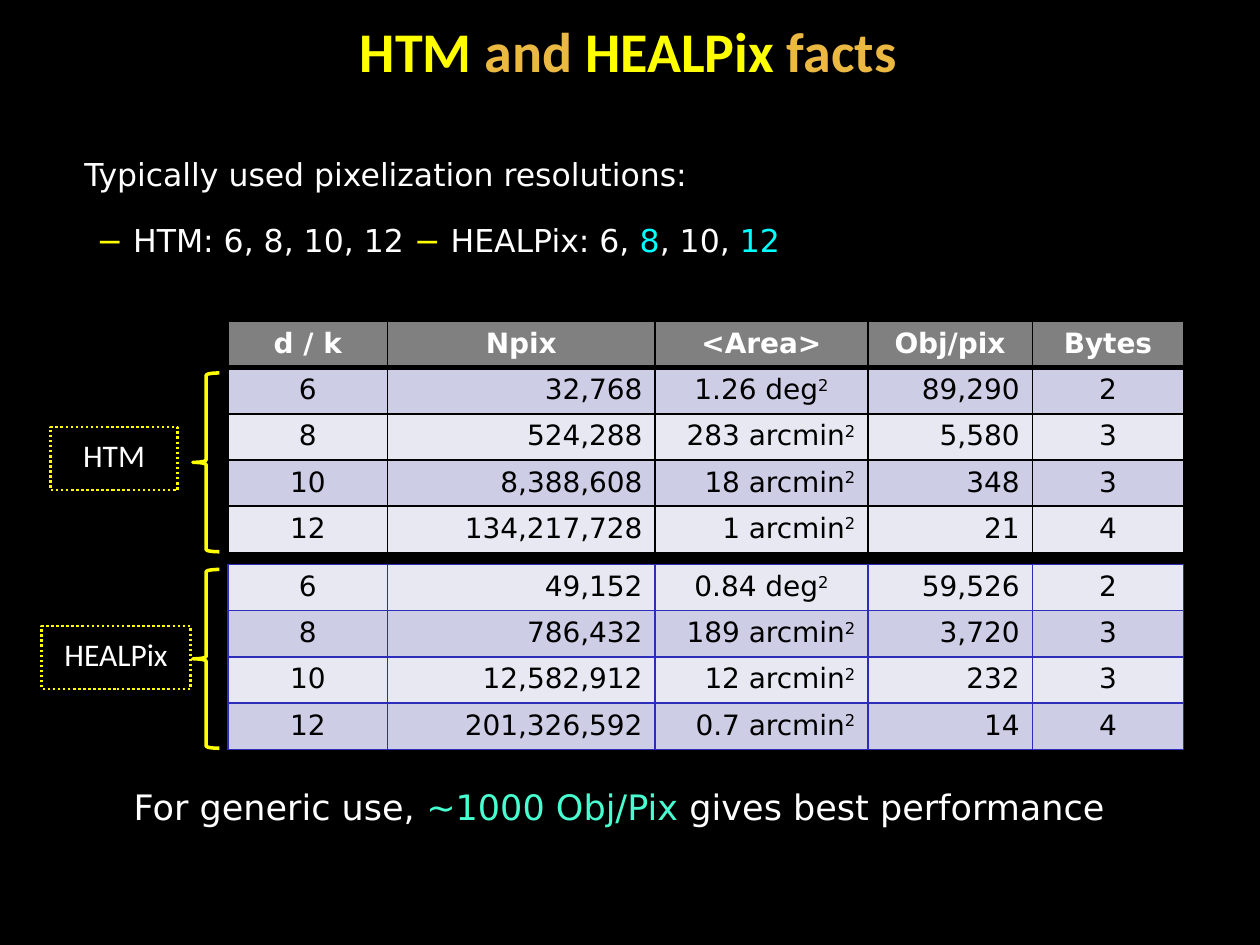
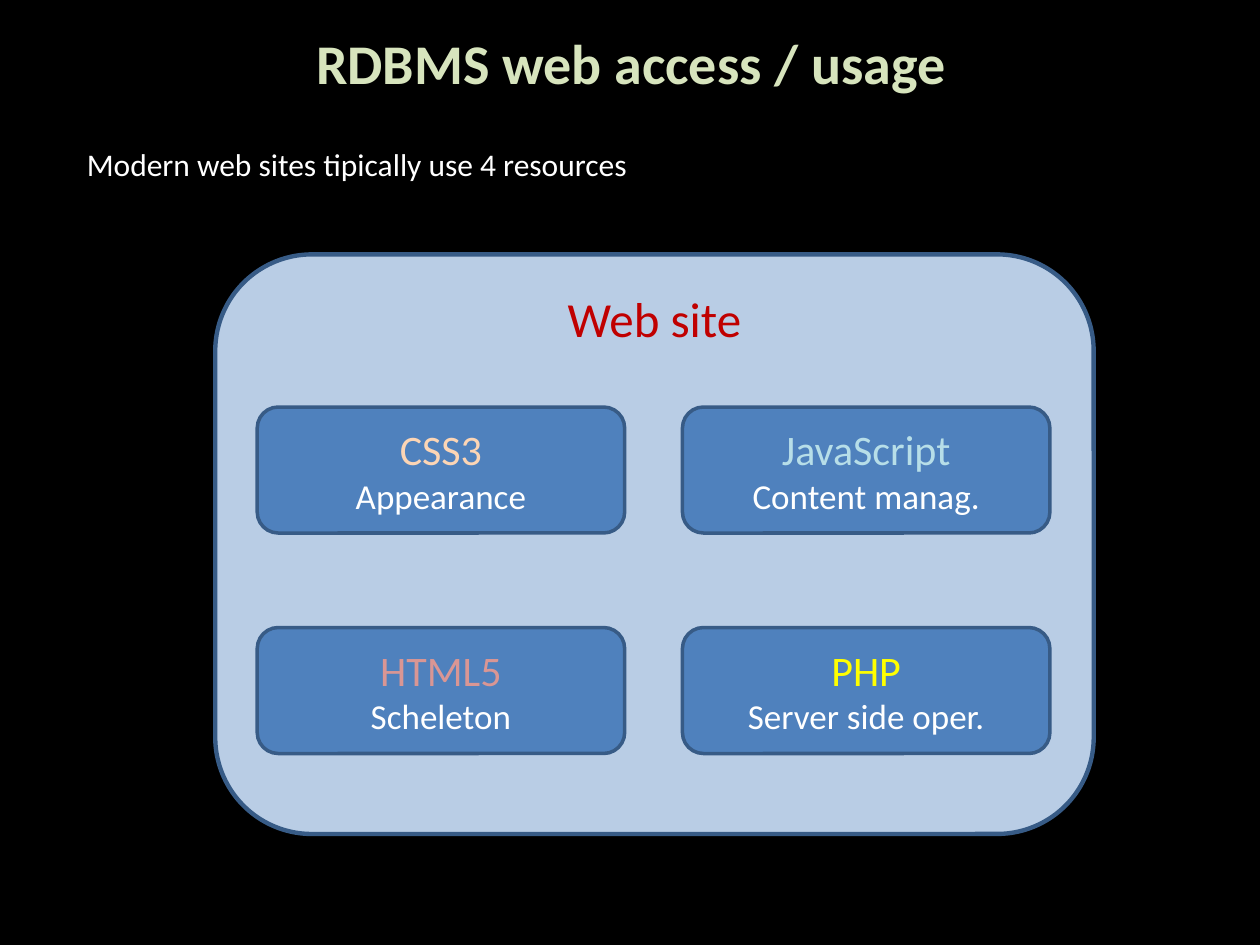
from dataclasses import dataclass

from lxml import etree
from pptx import Presentation
from pptx.dml.color import RGBColor
from pptx.enum import dml, shapes, text
from pptx.oxml import ns
from pptx.util import Pt


@dataclass(frozen=True)
class Theme:
    sans: str = "Calibri"
    wide: str = "DejaVu Sans"
    black: str = "000000"
    white: str = "FFFFFF"
    yellow: str = "FFFF00"
    gold: str = "EBB941"
    cyan: str = "00FFFF"
    mint: str = "47FFD1"
    lime: str = "D7E4BD"
    head: str = "808080"
    band: str = "CDCDE6"
    pale: str = "E8E8F3"
    grid: str = "2D2DB9"
    panel: str = "B9CDE5"
    tile: str = "4F81BD"
    edge: str = "375B86"
    red: str = "C00000"
    peach: str = "FCD5B5"
    sky: str = "B7DEE8"
    rose: str = "D99694"
    title_pt: int = 32
    panel_pt: int = 28
    tile_pt: int = 24
    large_pt: int = 20
    body_pt: int = 18
    cell_pt: int = 16


T = Theme()
MID = text.MSO_ANCHOR.MIDDLE
LEFT, CENTER, RIGHT = text.PP_ALIGN.LEFT, text.PP_ALIGN.CENTER, text.PP_ALIGN.RIGHT


def write(tf, paras, font=T.sans, align=CENTER, bold=False, spacing=None):
    for i, (size, *runs) in enumerate(paras):
        p = tf.add_paragraph() if i else tf.paragraphs[0]
        p.alignment = align
        p.line_spacing = spacing
        p.font.name, p.font.size, p.font.bold = font, Pt(size), bold
        for words, color in runs:
            r = p.add_run()
            r.text = words
            r.font.color.rgb = RGBColor.from_string(color)


def add_box(s, at, kind=None, fill=None, line=None, width=2, margins=(7.2, 3.6),
            anchor=text.MSO_ANCHOR.TOP):
    at = [Pt(v) for v in at]
    if kind is None:
        sp = s.shapes.add_textbox(*at)
    else:
        sp = s.shapes.add_shape(kind, *at)
        sp.shadow.inherit = False
        sp.line.color.rgb = RGBColor.from_string(line)
        sp.line.width = Pt(width)
        if fill:
            sp.fill.solid()
            sp.fill.fore_color.rgb = RGBColor.from_string(fill)
        else:
            sp.fill.background()
    tf = sp.text_frame
    tf.word_wrap = True
    tf.vertical_anchor = anchor
    tf.margin_left = tf.margin_right = Pt(margins[0])
    tf.margin_top = tf.margin_bottom = Pt(margins[1])
    return sp


prs = Presentation()
prs.slide_width, prs.slide_height = Pt(720), Pt(540)
back = prs.slide_master.background.fill
back.solid()
back.fore_color.rgb = RGBColor.from_string(T.black)

titles = [
    ((11.5, 5.8, 695, 46), [("HTM", T.yellow), (" and ", T.gold),
                            ("HEALPix", T.yellow), (" facts", T.gold)]),
    ((18.7, 8.6, 684, 54), [("RDBMS web access / usage", T.lime)]),
]
slides = []
for at, runs in titles:
    s = prs.slides.add_slide(prs.slide_layouts[6])
    sp = add_box(s, at, anchor=MID)
    write(sp.text_frame, [(T.title_pt, *runs)], bold=True)
    slides.append(s)
facts, web = slides

sp = add_box(facts, (48.2, 88.6, 443, 30), margins=(0, 0))
write(sp.text_frame, [(T.body_pt, ("Typically used pixelization resolutions:", T.white))],
      T.wide, LEFT, spacing=1.01)
sp = add_box(facts, (48.2, 121.7, 430.6, 34), margins=(7.2, 7.2))
write(sp.text_frame, [(T.body_pt, ("− ", T.yellow), ("HTM: 6, 8, 10, 12 ", T.white),
                       ("− ", T.yellow), ("HEALPix: 6, ", T.white), ("8", T.cyan),
                       (", 10, ", T.white), ("12", T.cyan))], T.wide, LEFT, spacing=0.89)

header = ["d / k", "Npix", "<Area>", "Obj/pix", "Bytes"]
htm = [
    ["6", "32,768", "1.26 deg", "89,290", "2"],
    ["8", "524,288", "283 arcmin", "5,580", "3"],
    ["10", "8,388,608", "18 arcmin", "348", "3"],
    ["12", "134,217,728", "1 arcmin", "21", "4"],
]
healpix = [
    ["6", "49,152", "0.84 deg", "59,526", "2"],
    ["8", "786,432", "189 arcmin", "3,720", "3"],
    ["10", "12,582,912", "12 arcmin", "232", "3"],
    ["12", "201,326,592", "0.7 arcmin", "14", "4"],
]
col_widths = [91, 153, 121.5, 94, 86.5]
row_height = 26.4
tables = [
    (183.6, [header] + htm, [T.head, T.band, T.pale, T.band, T.pale], T.black),
    (322.5, healpix, [T.pale, T.band, T.pale, T.band], T.grid),
]
for top, rows, fills, border in tables:
    tbl = facts.shapes.add_table(len(rows), len(col_widths), Pt(130.4), Pt(top),
                                 Pt(sum(col_widths)), Pt(row_height * len(rows))).table
    tbl.first_row = tbl.horz_banding = False
    for col, w in zip(tbl.columns, col_widths):
        col.width = Pt(w)
    for i, (row, fill) in enumerate(zip(rows, fills)):
        tbl.rows[i].height = Pt(row_height)
        is_head = row is header
        after_head = i > 0 and rows[i - 1] is header
        for j, value in enumerate(row):
            cell = tbl.cell(i, j)
            cell.fill.solid()
            cell.fill.fore_color.rgb = RGBColor.from_string(fill)
            centered = is_head or j in (0, 4) or value.endswith("deg")
            color = T.white if is_head else T.black
            runs = [(value, color)]
            if j == 2 and not is_head:
                runs.append(("2", color))
            write(cell.text_frame, [(T.cell_pt, *runs)], T.wide,
                  CENTER if centered else RIGHT, is_head)
            if len(runs) == 2:
                squared = cell.text_frame.paragraphs[0].runs[1]
                squared._r.get_or_add_rPr().set("baseline", "30000")
            tcPr = cell._tc.get_or_add_tcPr()
            for k, side in enumerate("LRTB"):
                thick = (side == "B" and is_head) or (side == "T" and after_head)
                ln = etree.Element(ns.qn("a:ln" + side), w=str(Pt(3 if thick else 1)))
                solid = etree.SubElement(ln, ns.qn("a:solidFill"))
                etree.SubElement(solid, ns.qn("a:srgbClr"), val=border)
                tcPr.insert(k, ln)

for name, at, brace_top in [("HEALPix", (23.8, 357.8, 85, 36), 325.4),
                            ("HTM", (28.8, 244.1, 72.7, 36), 213.1)]:
    sp = add_box(facts, at, shapes.MSO_SHAPE.RECTANGLE, line=T.yellow, width=1.45,
                 margins=(7.9, 7.9))
    sp.line.dash_style = dml.MSO_LINE.ROUND_DOT
    write(sp.text_frame, [(T.body_pt, (name, T.white))], spacing=0.89)
    brace = add_box(facts, (110.2, brace_top, 15.1, 102.2), shapes.MSO_SHAPE.LEFT_BRACE,
                    line=T.yellow)
    brace.adjustments[0] = 0.083

sp = add_box(facts, (59.8, 448.6, 588.2, 30), margins=(0, 0))
write(sp.text_frame, [(T.large_pt, ("For generic use, ", T.white), ("~1000 Obj/Pix", T.mint),
                       (" gives best performance", T.white))], T.wide, spacing=1.01)

sp = add_box(web, (42.5, 79.2, 488.9, 29))
write(sp.text_frame, [(T.body_pt, ("Modern web sites tipically use 4 resources", T.white))],
      align=LEFT)
rounded = shapes.MSO_SHAPE.ROUNDED_RECTANGLE
sp = add_box(web, (123, 145.4, 502, 331.2), rounded, T.panel, T.edge, 2.5)
write(sp.text_frame, [(T.panel_pt, ("Web site", T.red))])

resources = [
    ("CSS3", T.peach, "Appearance"),
    ("JavaScript", T.sky, "Content manag."),
    ("HTML5", T.rose, "Scheleton"),
    ("PHP", T.yellow, "Server side oper."),
]
for i, (name, color, role) in enumerate(resources):
    row, col = divmod(i, 2)
    sp = add_box(web, (147 + 243 * col, 232.6 + 126 * row, 210, 72), rounded,
                 T.tile, T.edge, margins=(7.2, 5.8), anchor=MID)
    write(sp.text_frame, [(T.tile_pt, (name, color)), (T.large_pt, (role, T.white))])

prs.save("out.pptx")
